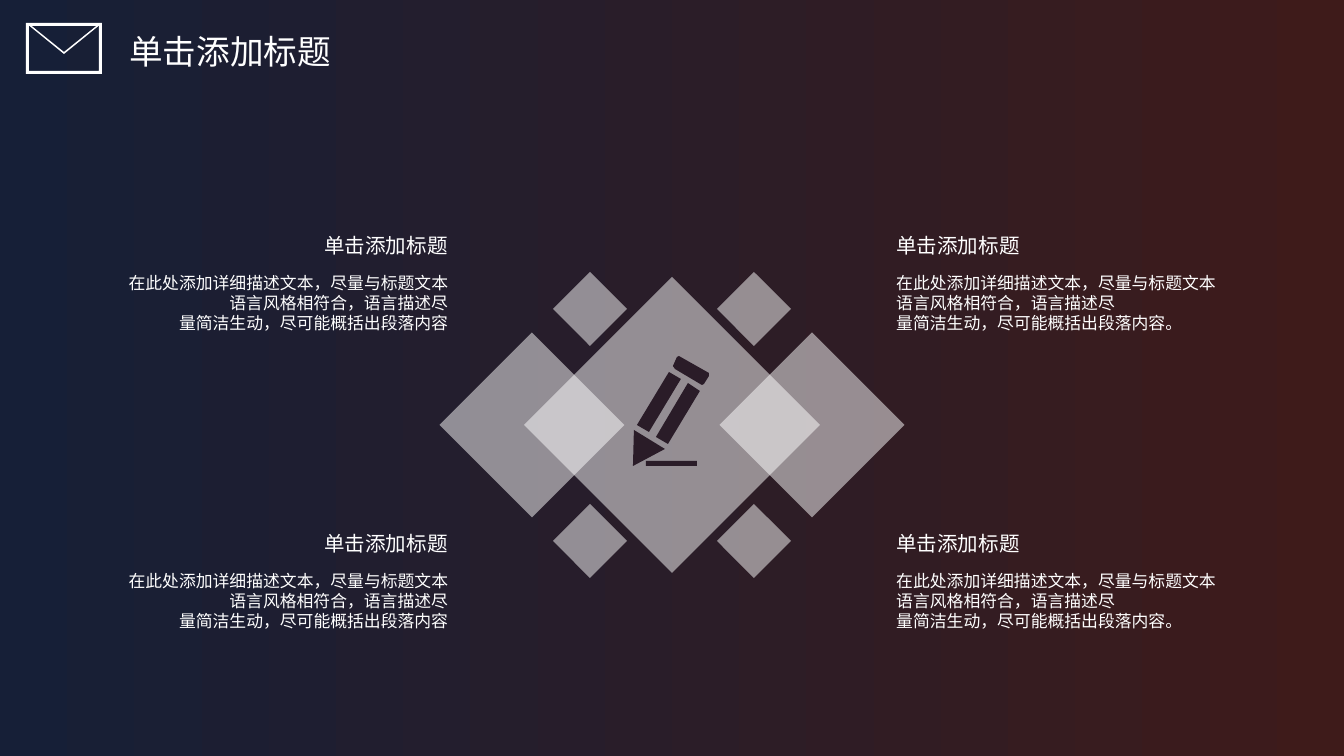
from pptx import Presentation
from pptx.dml.color import RGBColor
from pptx.enum.shapes import MSO_SHAPE as SHAPE
from pptx.enum.text import MSO_ANCHOR as ANCHOR, PP_ALIGN as ALIGN
from pptx.oxml.ns import qn
from pptx.util import Emu, Pt
from lxml import etree

PX = 914400 / 134.4
WHITE = "FFFFFF"
SANS = "Noto Sans CJK SC"


def px(*lengths):
    return [Emu(round(length * PX)) for length in lengths]


def color(hex_code):
    return RGBColor.from_string(hex_code)


def paint(shape, hex_code, alpha=100):
    shape.shadow.inherit = False
    shape.line.fill.background()
    shape.fill.solid()
    shape.fill.fore_color.rgb = color(hex_code)
    if alpha < 100:
        tint = shape.fill._xPr.find(".//" + qn("a:srgbClr"))
        etree.SubElement(tint, qn("a:alpha"), val=str(alpha * 1000))


def write(paragraph, text, size, font="Calibri", hex_code=WHITE, align=ALIGN.LEFT, before=0):
    paragraph.alignment = align
    paragraph.space_before = Pt(before)
    run = paragraph.add_run()
    run.text = text
    run.font.size = Pt(size)
    run.font.name = font
    run.font.color.rgb = color(hex_code)


prs = Presentation()
prs.slide_width, prs.slide_height = px(1344, 756)
slide = prs.slides.add_slide(prs.slide_layouts[6])
shapes = slide.shapes

backdrop = slide.background.fill
backdrop.gradient()
backdrop.gradient_angle = 0
for stop, hex_code, position in zip(backdrop.gradient_stops, ("161F37", "3E1B1A"), (0, 1)):
    stop.color.rgb = color(hex_code)
    stop.position = position

envelope = shapes.add_shape(SHAPE.FRAME, *px(26, 23, 76, 51))
envelope.adjustments[0] = 0.06
paint(envelope, WHITE)

title = shapes.add_textbox(*px(116, 24, 290, 54)).text_frame
title.word_wrap = True
title.vertical_anchor = ANCHOR.MIDDLE
write(title.paragraphs[0], "单击添加标题", 18, font=SANS)

captions = [
    (79, ALIGN.RIGHT, "量简洁生动，尽可能概括出段落内容"),
    (883, ALIGN.LEFT, "量简洁生动，尽可能概括出段落内容。"),
]
for left, align, ending in captions:
    for top in (226, 524):
        caption = shapes.add_textbox(*px(left, top, 382, 115)).text_frame
        caption.word_wrap = True
        write(caption.paragraphs[0], "单击添加标题", 11, align=align)
        details = ["在此处添加详细描述文本，尽量与标题文本", "语言风格相符合，语言描述尽", ending]
        for index, detail in enumerate(details):
            write(caption.add_paragraph(), detail, 9, hex_code="FEFEFE", align=align,
                  before=0 if index else 8)

CENTER_X, CENTER_Y = 672, 425
diamonds = [(140, 0, 185), (-140, 0, 185)]
diamonds += [(dx, dy, 74) for dx in (-82, 82) for dy in (-116, 116)]
diamonds.append((0, 0, 296))
for dx, dy, side in diamonds:
    corner = (CENTER_X + dx - side / 2, CENTER_Y + dy - side / 2)
    paint(shapes.add_shape(SHAPE.DIAMOND, *px(*corner, side, side)), WHITE, alpha=50)

flap = [[(27, 24), (28, 23), (64, 52), (100, 23), (101, 24), (64, 54)]]
pencil = [
    [(646, 461), (697, 461), (697, 466), (646, 466)],
    [(634, 430), (665, 449), (633, 466)],
    [(688, 383), (700, 391), (668, 444), (656, 437)],
    [(669, 372), (681, 379), (649, 432), (637, 425)],
    [(679, 356), (709, 373), (709, 376), (704, 384), (702, 385), (675, 369), (673, 366), (677, 357)],
]
for contours, hex_code in ((flap, WHITE), (pencil, "2A1C28")):
    builder = shapes.build_freeform(*contours[0][0], scale=PX)
    for index, contour in enumerate(contours):
        if index:
            builder.move_to(*contour[0])
        builder.add_line_segments(contour[1:], close=True)
    paint(builder.convert_to_shape(), hex_code)

prs.save("out.pptx")
